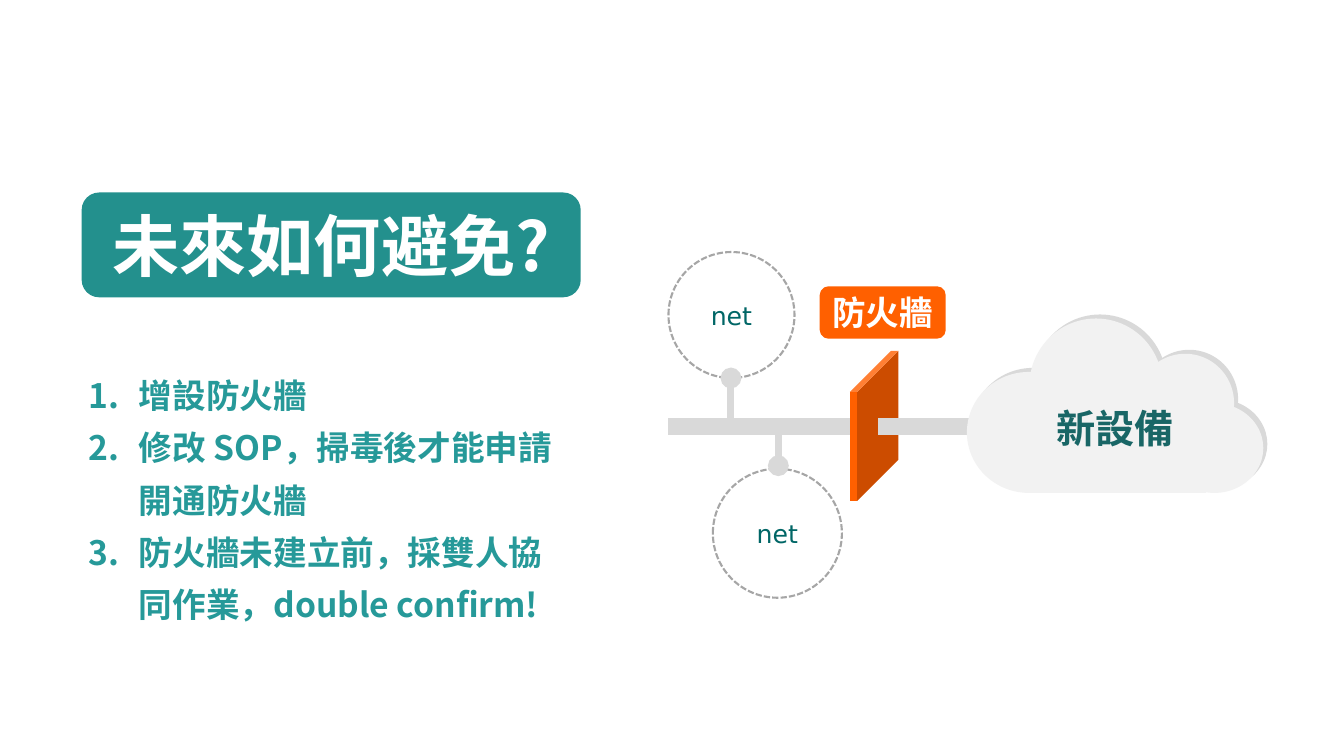
from dataclasses import dataclass

from lxml import etree
from pptx import Presentation
from pptx.dml.color import RGBColor
from pptx.enum import dml, shapes, text
from pptx.oxml.ns import qn
from pptx.util import Inches, Pt

CJK = "Noto Sans CJK SC"
LATIN = "DejaVu Sans"
GREY = "D9D9D9"
ORANGE = "FF6000"
SHAPE = shapes.MSO_SHAPE


@dataclass
class Style:
    size: float
    color: str
    font: str = CJK
    bold: bool = True


@dataclass
class Label:
    left: float
    top: float
    width: float
    height: float
    words: str
    fill: str
    style: Style


@dataclass
class Node:
    """A dashed network circle and the x, from and to of its stem."""
    left: float
    top: float
    size: float
    stem_x: float
    stem_start: float
    stem_end: float


@dataclass
class Puff:
    kind: shapes.MSO_SHAPE
    left: float
    top: float
    width: float
    height: float


STEPS = ["增設防火牆", "修改 SOP，掃毒後才能申請開通防火牆",
         "防火牆未建立前，採雙人協同作業，double confirm!"]
LABELS = [
    Label(0.81, 1.91, 4.95, 1.04, "未來如何避免?", "23908D", Style(48, "FFFFFF")),
    Label(8.13, 2.84, 1.25, 0.52, "防火牆", ORANGE, Style(24, "FFFFFF", LATIN)),
]
NODES = [
    Node(7.07, 4.65, 1.28, 7.72, 4.62, 4.25),
    Node(6.63, 2.5, 1.25, 7.25, 3.75, 4.23),
]
CLOUD = [
    Puff(SHAPE.OVAL, 9.63, 3.65, 1.23, 1.2),
    Puff(SHAPE.OVAL, 10.25, 3.12, 1.32, 1.33),
    Puff(SHAPE.OVAL, 11.31, 3.47, 0.97, 0.98),
    Puff(SHAPE.OVAL, 11.6, 3.96, 0.97, 0.89),
    Puff(SHAPE.RECTANGLE, 10.28, 4.04, 1.72, 0.81),
]
CLOUD_LAYERS = [(0, GREY), (0.04, "F2F2F2")]


def rgb(value: str) -> RGBColor:
    return RGBColor.from_string(value)


def style_paragraph(para, style: Style) -> None:
    for span in para.runs:
        span.font.size = Pt(style.size)
        span.font.bold = style.bold
        span.font.name = style.font
        span.font.color.rgb = rgb(style.color)
        east_asian = etree.SubElement(span.font._element, qn("a:ea"))
        east_asian.set("typeface", style.font)


def add_filled(page, kind, left: float, top: float, width: float, height: float,
               fill: str | None):
    """Add a shape without outline; no fill colour leaves it see-through."""
    box = page.shapes.add_shape(kind, Inches(left), Inches(top),
                                Inches(width), Inches(height))
    box.shadow.inherit = False
    box.line.fill.background()
    if fill:
        box.fill.solid()
        box.fill.fore_color.rgb = rgb(fill)
    else:
        box.fill.background()
    return box


def center_text(box, words: str, style: Style) -> None:
    frame = box.text_frame
    frame.margin_left = frame.margin_right = 0
    frame.margin_top = frame.margin_bottom = 0
    frame.vertical_anchor = text.MSO_ANCHOR.MIDDLE
    frame.word_wrap = True
    frame.text = words
    para = frame.paragraphs[0]
    para.alignment = text.PP_ALIGN.CENTER
    style_paragraph(para, style)


def add_line(page, x1: float, y1: float, x2: float, y2: float, width: float,
             dot_at_start: bool = False) -> None:
    line = page.shapes.add_connector(shapes.MSO_CONNECTOR.STRAIGHT, Inches(x1),
                                     Inches(y1), Inches(x2), Inches(y2))
    line.line.color.rgb = rgb(GREY)
    line.line.width = Pt(width)
    if dot_at_start:
        etree.SubElement(line.line._get_or_add_ln(), qn("a:headEnd"), type="oval")
    etree.SubElement(line._element.spPr, qn("a:effectLst"))


def add_node(page, node: Node) -> None:
    circle = add_filled(page, SHAPE.OVAL, node.left, node.top, node.size, node.size, None)
    circle.line.color.rgb = rgb("A6A6A6")
    circle.line.width = Pt(1.5)
    circle.line.dash_style = dml.MSO_LINE.SQUARE_DOT
    center_text(circle, "net", Style(18, "006666", LATIN, False))
    add_line(page, node.stem_x, node.stem_start, node.stem_x, node.stem_end, 5, True)


def add_steps(page) -> None:
    box = page.shapes.add_textbox(Inches(0.78), Inches(3.55), Inches(4.99), Inches(2.67))
    frame = box.text_frame
    frame.word_wrap = True
    frame.auto_size = text.MSO_AUTO_SIZE.SHAPE_TO_FIT_TEXT
    frame.text = "\n".join(STEPS)
    for para in frame.paragraphs:
        para.line_spacing = 1.3
        properties = para._p.get_or_add_pPr()
        properties.set("marL", str(Inches(0.5)))
        properties.set("indent", str(-Inches(0.5)))
        etree.SubElement(properties, qn("a:buFont"), typeface="+mj-lt")
        etree.SubElement(properties, qn("a:buAutoNum"), type="arabicPeriod")
        style_paragraph(para, Style(24, "269999"))


def add_cloud(page) -> None:
    for shift, fill in CLOUD_LAYERS:
        for puff in CLOUD:
            add_filled(page, puff.kind, puff.left - shift, puff.top + shift,
                       puff.width, puff.height, fill)
    box = page.shapes.add_textbox(Inches(10.38), Inches(3.96), Inches(1.38), Inches(0.57))
    box.text_frame.word_wrap = False
    box.text_frame.auto_size = text.MSO_AUTO_SIZE.SHAPE_TO_FIT_TEXT
    box.text_frame.text = "新設備"
    style_paragraph(box.text_frame.paragraphs[0], Style(28, "196666"))


def main() -> None:
    deck = Presentation()
    deck.slide_width, deck.slide_height = Inches(13.33), Inches(7.5)
    page = deck.slides.add_slide(deck.slide_layouts[6])

    add_steps(page)
    for label in LABELS:
        box = add_filled(page, SHAPE.ROUNDED_RECTANGLE, label.left, label.top,
                         label.width, label.height, label.fill)
        center_text(box, label.words, label.style)

    add_line(page, 6.63, 4.23, 8.81, 4.23, 12)
    for node in NODES:
        add_node(page, node)
    firewall = add_filled(page, SHAPE.CUBE, 8.43, 3.48, 0.48, 1.49, ORANGE)
    firewall.adjustments[0] = 0.85
    add_line(page, 8.71, 4.23, 10.51, 4.23, 12)
    add_cloud(page)
    deck.save("out.pptx")


if __name__ == "__main__":
    main()
